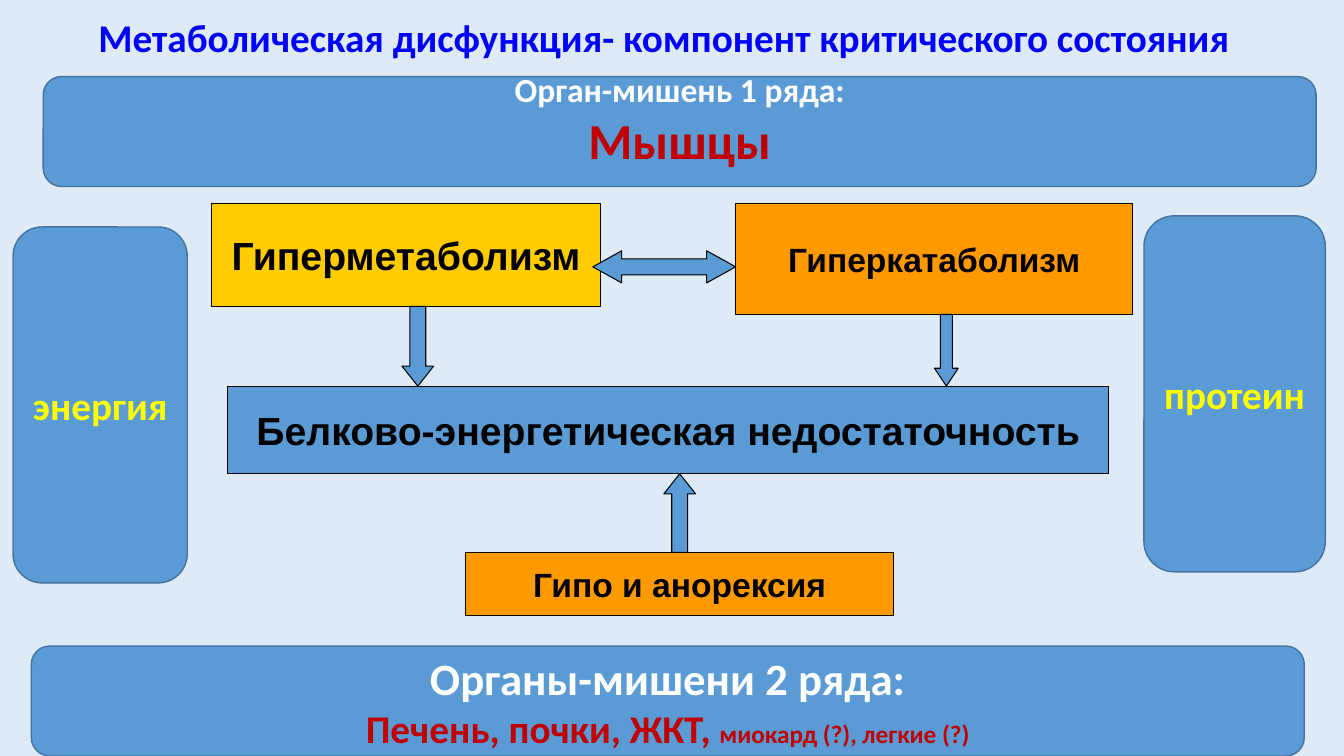
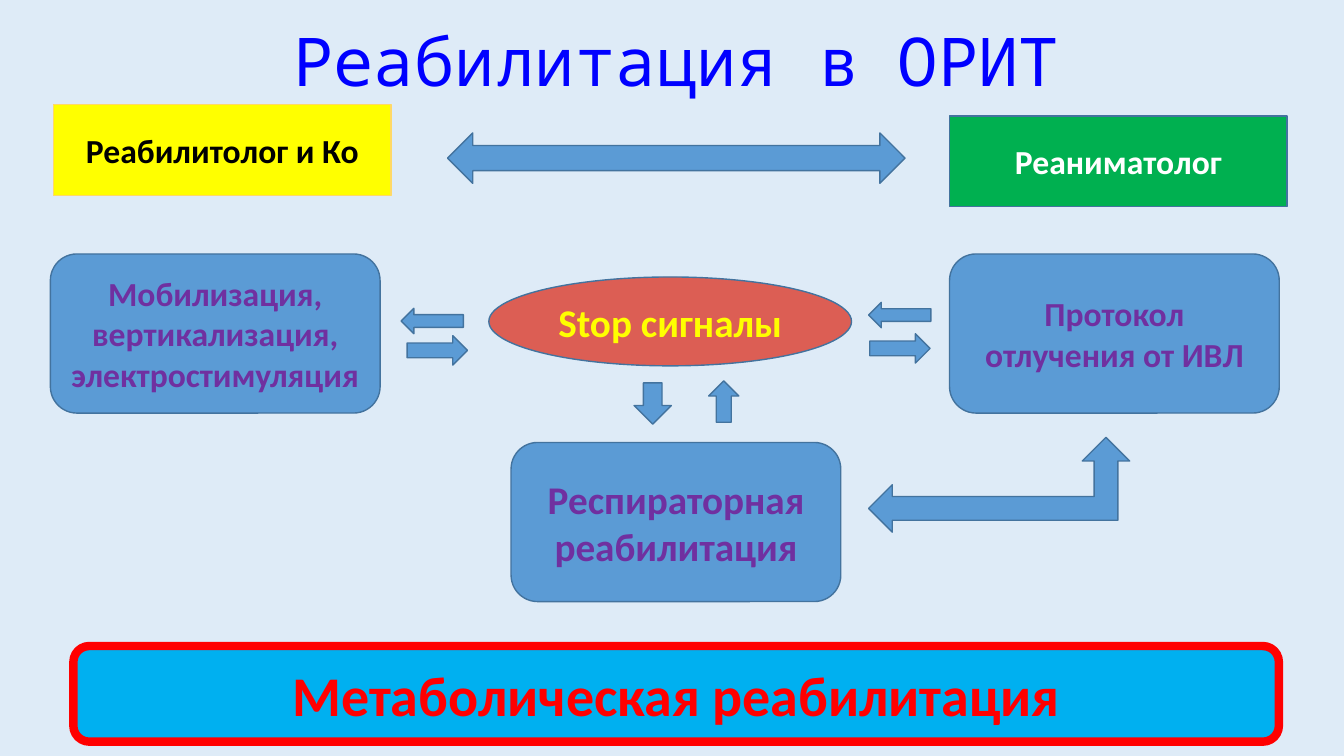
from dataclasses import dataclass

from pptx import Presentation
from pptx.dml.color import RGBColor
from pptx.enum.shapes import MSO_SHAPE as Preset
from pptx.enum.text import MSO_ANCHOR as Anchor, PP_ALIGN as Align
from pptx.util import Cm, Pt


@dataclass(frozen=True)
class Theme:
    """Colours, fonts and type sizes shared by the slides."""
    background: str = "DEEBF7"
    blue: str = "5B9BD5"
    outline: str = "43739E"
    title: str = "0000FF"
    black: str = "000000"
    white: str = "FFFFFF"
    amber: str = "FFCC00"
    orange: str = "FF9900"
    yellow: str = "FFFF00"
    sand: str = "FFD966"
    crimson: str = "C00000"
    purple: str = "7030A0"
    green: str = "00B050"
    coral: str = "DC5E54"
    sky: str = "00B0F0"
    red: str = "FF0000"
    body: str = "Calibri"
    scheme: str = "Arial"
    mono: str = "Noto Sans Mono"
    note: int = 18
    small: int = 24
    medium: int = 28
    large: int = 32
    accent: int = 36
    base: int = 40
    heading: int = 48


THEME = Theme()


@dataclass(frozen=True)
class Box:
    """A rectangle measured in centimetres."""
    left: float
    top: float
    width: float
    height: float

    def inner(self, left, top, width, height):
        """Return a box placed relative to this one."""
        return Box(self.left + left, self.top + top, width, height)

    def lengths(self):
        """Return the position and size as lengths."""
        return [Cm(side) for side in (self.left, self.top, self.width, self.height)]


def run(words, size, color, font=THEME.body, bold=True):
    """Describe a run as its words, format values and colour."""
    return words, {"size": Pt(size), "name": font, "bold": bold}, color


def assign(target, values):
    """Set every attribute named in the values."""
    for name, value in values.items():
        setattr(target, name, value)


def write(holder, lines, wrap=True, spacing=None, **margins):
    """Write centred lines, each a list of runs."""
    frame = holder.text_frame
    assign(frame, {"word_wrap": wrap, "vertical_anchor": Anchor.MIDDLE, **margins})
    for number, line in enumerate(lines):
        paragraph = frame.add_paragraph() if number else frame.paragraphs[0]
        assign(paragraph, {"alignment": Align.CENTER, "line_spacing": spacing})
        for words, values, color in line:
            piece = paragraph.add_run()
            piece.text = words
            assign(piece.font, values)
            piece.font.color.rgb = RGBColor.from_string(color)


def add_part(slide, preset, box, fill=THEME.blue, line=THEME.outline, weight=1, bends=()):
    """Add a flat preset shape."""
    part = slide.shapes.add_shape(preset, *box.lengths())
    part.shadow.inherit = False
    part.fill.solid()
    part.fill.fore_color.rgb = RGBColor.from_string(fill)
    part.line.color.rgb = RGBColor.from_string(line)
    part.line.width = Pt(weight)
    for number, bend in enumerate(bends):
        part.adjustments[number] = bend
    return part


def add_panel(slide, box, lines, **margins):
    """Add a blue rounded panel with text."""
    write(add_part(slide, Preset.ROUNDED_RECTANGLE, box), lines, **margins)


def add_title(slide, box, title, spacing=None):
    """Add the slide title."""
    write(slide.shapes.add_textbox(*box.lengths()), [[title]], spacing=spacing)


def add_state(slide, box, words, size, fill):
    """Add a black-edged state of the scheme."""
    state = add_part(slide, Preset.RECTANGLE, box, fill, THEME.black, 0.75)
    write(state, [[run(words, size, THEME.black, THEME.scheme)]], wrap=False)


def add_drop(slide, preset, upper, lower, center, width, bend):
    """Add a vertical arrow that fills the gap between two states."""
    top = upper.top + upper.height
    gap = Box(center - width / 2, top, width, lower.top - top)
    add_part(slide, preset, gap, line=THEME.black, weight=0.75, bends=(0.5, bend))


def add_scheme(slide, box):
    """Add the states that lead to malnutrition and their arrows."""
    hypermetabolism = box.inner(0, 0, 9.8, 2.59)
    hypercatabolism = box.inner(13.21, 0, 10.01, 2.79)
    malnutrition = box.inner(0.41, 4.6, 22.2, 2.21)
    anorexia = box.inner(6.4, 8.79, 10.8, 1.6)
    for state, words, size, fill in (
        (hypermetabolism, "Гиперметаболизм", THEME.medium, THEME.amber),
        (hypercatabolism, "Гиперкатаболизм", THEME.small, THEME.orange),
        (malnutrition, "Белково-энергетическая недостаточность", THEME.medium, THEME.blue),
        (anorexia, "Гипо и анорексия", THEME.small, THEME.orange),
    ):
        add_state(slide, state, words, size, fill)
    add_part(slide, Preset.LEFT_RIGHT_ARROW, box.inner(9.61, 1.19, 3.6, 0.81),
             line=THEME.black, weight=0.75, bends=(0.5, 0.9))
    for preset, upper, lower, center, width, bend in (
        (Preset.DOWN_ARROW, hypermetabolism, malnutrition, 5.2, 0.8, 0.63),
        (Preset.DOWN_ARROW, hypercatabolism, malnutrition, 18.52, 0.6, 0.75),
        (Preset.UP_ARROW, malnutrition, anorexia, 11.8, 0.8, 0.63),
    ):
        add_drop(slide, preset, upper, lower, box.left + center, width, bend)


def add_partners(slide, box):
    """Add the two specialists and the arrow between them."""
    for left, top, words, color, fill, line in (
        (0, 0, "Реабилитолог и Ко", THEME.black, THEME.yellow, THEME.sand),
        (22.58, 0.28, "Реаниматолог", THEME.white, THEME.green, THEME.outline),
    ):
        partner = add_part(slide, Preset.RECTANGLE, box.inner(left, top, 8.51, 2.29), fill, line)
        write(partner, [[run(words, THEME.small, color)]])
    add_part(slide, Preset.LEFT_RIGHT_ARROW, box.inner(9.93, 0.71, 11.53, 1.27))


def add_exchange(slide, box, indent, drop):
    """Add a left arrow with a right arrow below it."""
    add_part(slide, Preset.LEFT_ARROW, box.inner(0, 0, 1.57, 0.64))
    add_part(slide, Preset.RIGHT_ARROW, box.inner(indent, drop, 1.52, 0.74))


def add_care(slide, box):
    """Add the care measures around the stop signals."""
    signals = add_part(slide, Preset.OVAL, box.inner(11.05, 0.58, 9.14, 2.24), THEME.coral)
    write(signals, [[run("Stop сигналы", THEME.medium, THEME.yellow)]])
    for left, top, size, lines in (
        (0, 0, THEME.small, ("Мобилизация, вертикализация,", "электростимуляция")),
        (22.66, 0, THEME.small, ("Протокол отлучения от ИВЛ",)),
        (11.61, 4.75, THEME.medium, ("Респираторная реабилитация",)),
    ):
        add_panel(slide, box.inner(left, top, 8.31, 4.01),
                  [[run(words, size, THEME.purple)] for words in lines])
    add_exchange(slide, box.inner(8.84, 1.37, 1.67, 1.43), 0.15, 0.69)
    add_exchange(slide, box.inner(20.62, 1.22, 1.57, 1.53), 0.03, 0.79)
    add_part(slide, Preset.DOWN_ARROW, box.inner(14.71, 3.25, 0.94, 1.04))
    add_part(slide, Preset.UP_ARROW, box.inner(16.59, 3.2, 0.76, 1.04))
    add_part(slide, Preset.LEFT_UP_ARROW, box.inner(20.62, 4.62, 6.58, 2.39))


def add_foundation(slide, box):
    """Add the red-edged band at the foot."""
    band = add_part(slide, Preset.ROUNDED_RECTANGLE, box, THEME.sky, THEME.red, 6)
    write(band, [[run("Метаболическая реабилитация", THEME.base, THEME.red)]])


def add_page(deck):
    """Add a blank slide with the shared background."""
    slide = deck.slides.add_slide(deck.slide_layouts[6])
    slide.background.fill.solid()
    slide.background.fill.fore_color.rgb = RGBColor.from_string(THEME.background)
    return slide


def build_dysfunction(deck):
    """Build the slide on metabolic dysfunction."""
    slide = add_page(deck)
    add_title(slide, Box(0.3, 0.3, 32.84, 1.4),
              run("Метаболическая дисфункция- компонент критического состояния",
                  THEME.medium, THEME.title), 0.9)
    add_scheme(slide, Box(5.33, 5.13, 23.22, 10.39))
    add_panel(slide, Box(0.79, 16.28, 32.08, 2.77), [
        [run("Органы-мишени 2 ряда:", THEME.large, THEME.white)],
        [run("Печень, почки, ЖКТ, ", THEME.medium, THEME.crimson),
         run("миокард (?), легкие (?)", THEME.note, THEME.crimson)],
    ])
    add_panel(slide, Box(1.09, 1.93, 32.08, 2.77), [
        [run("Орган-мишень 1 ряда:", THEME.small, THEME.white)],
        [run("Мышцы", THEME.accent, THEME.crimson)],
    ], margin_top=Cm(0), margin_bottom=Cm(0.6))
    for box, words in (
        (Box(0.33, 5.72, 4.39, 8.97), "энергия"),
        (Box(28.83, 5.44, 4.57, 8.97), "протеин"),
    ):
        add_panel(slide, box, [[run(words, THEME.medium, THEME.yellow)]])


def build_rehabilitation(deck):
    """Build the slide on rehabilitation in intensive care."""
    slide = add_page(deck)
    add_title(slide, Box(5.61, 0, 22.86, 3.02),
              run("Реабилитация в ОРИТ", THEME.heading, THEME.title, THEME.mono, False))
    add_partners(slide, Box(1.35, 2.64, 31.09, 2.57))
    add_care(slide, Box(1.27, 6.4, 30.97, 8.76))
    add_foundation(slide, Box(1.85, 16.28, 30.38, 2.41))


def main():
    """Build and save the deck."""
    deck = Presentation()
    assign(deck, {"slide_width": Cm(33.87), "slide_height": Cm(19.05)})
    build_dysfunction(deck)
    build_rehabilitation(deck)
    deck.save("out.pptx")


if __name__ == "__main__":
    main()
